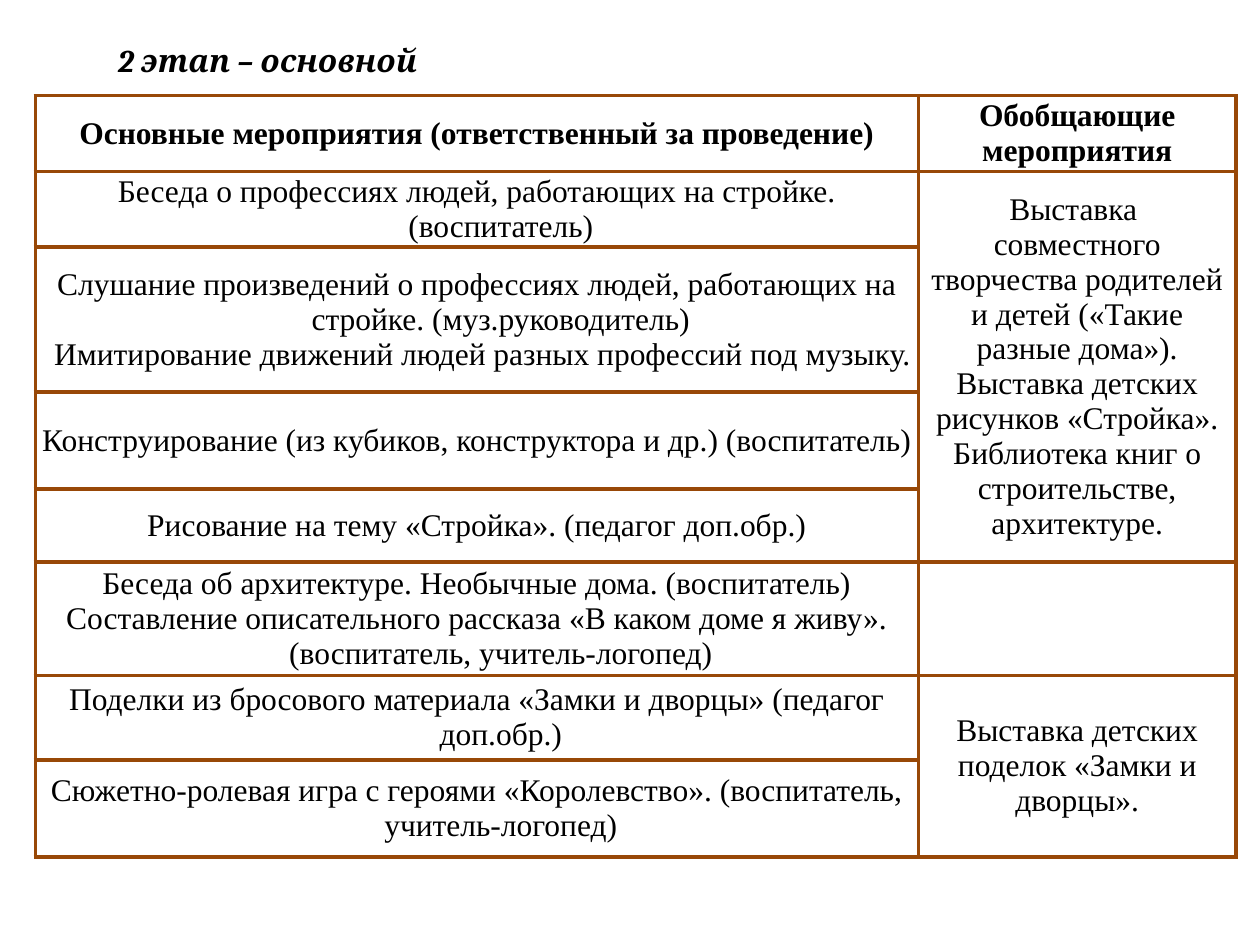
from lxml.etree import SubElement
from pptx import Presentation
from pptx.dml.color import RGBColor
from pptx.enum.text import MSO_ANCHOR, MSO_AUTO_SIZE, PP_ALIGN
from pptx.oxml import parse_xml
from pptx.oxml.ns import nsdecls, qn
from pptx.util import Inches, Pt

BLACK = RGBColor(0x00, 0x00, 0x00)
BROWN = RGBColor(0x98, 0x48, 0x07)
WHITE = RGBColor(0xFF, 0xFF, 0xFF)

COLUMN_WIDTHS = [7.01, 2.52]
ROW_HEIGHTS = [0.6, 0.6, 1.15, 0.77, 0.58, 0.9, 0.67, 0.77]
HANGING = (0.38, -0.38)
MUSIC_INDENT = (0.1, -0.01)

# One entry per row; each holds the paragraphs of its cell
ACTIVITIES = [
    ["Основные мероприятия (ответственный за проведение)"],
    ["Беседа о профессиях людей, работающих на стройке. (воспитатель)"],
    ["Слушание произведений о профессиях людей, работающих на стройке. (муз.руководитель)",
     "Имитирование движений людей разных профессий под музыку."],
    ["Конструирование (из кубиков, конструктора и др.) (воспитатель)"],
    ["Рисование на тему «Стройка». (педагог доп.обр.)"],
    ["Беседа об архитектуре. Необычные дома. (воспитатель)",
     "Составление описательного рассказа «В каком доме я живу». (воспитатель, учитель-логопед)"],
    ["Поделки из бросового материала «Замки и дворцы» (педагог доп.обр.)"],
    ["Сюжетно-ролевая игра с героями «Королевство». (воспитатель, учитель-логопед)"],
]

# First row, last row, paragraphs
RESULTS = [
    (0, 0, ["Обобщающие мероприятия"]),
    (1, 4, ["Выставка  совместного творчества родителей и детей («Такие разные дома»).",
            "Выставка детских рисунков «Стройка».",
            "Библиотека книг о строительстве, архитектуре."]),
    (6, 7, ["Выставка детских поделок «Замки и дворцы»."]),
]


def set_indent(paragraph, left, first):
    properties = paragraph._p.get_or_add_pPr()
    properties.set("marL", str(Inches(left)))
    properties.set("indent", str(Inches(first)))


def style_font(font, name, bold, italic=False):
    font.name = name
    font.size = Pt(18)
    font.bold = bold
    font.italic = italic
    font.color.rgb = BLACK


def add_title(slide, left, top, width, height):
    box = slide.shapes.add_textbox(Inches(left), Inches(top), Inches(width), Inches(height))
    frame = box.text_frame
    frame.word_wrap = True
    frame.auto_size = MSO_AUTO_SIZE.SHAPE_TO_FIT_TEXT
    frame.text = "2 этап – основной"
    paragraph = frame.paragraphs[0]
    paragraph.alignment = PP_ALIGN.JUSTIFY
    paragraph.line_spacing = 1.5
    set_indent(paragraph, 0, 0.49)
    style_font(paragraph.runs[0].font, "Cambria", True, True)


def format_cell(cell):
    cell.margin_left = cell.margin_right = Inches(0.03)
    cell.margin_top = cell.margin_bottom = 0
    cell.vertical_anchor = MSO_ANCHOR.MIDDLE
    cell.fill.background()
    properties = cell._tc.get_or_add_tcPr()
    for position, side in enumerate(("lnL", "lnR", "lnT", "lnB")):
        line = parse_xml(f'<a:{side} {nsdecls("a")} w="{Pt(2.25)}"/>')
        color = SubElement(SubElement(line, qn("a:solidFill")), qn("a:srgbClr"))
        color.set("val", str(BROWN))
        properties.insert(position, line)


def fill_cell(cell, texts, bold, indents=()):
    cell.text_frame.text = "\n".join(texts)
    for paragraph in cell.text_frame.paragraphs:
        paragraph.alignment = PP_ALIGN.CENTER
        style_font(paragraph.runs[0].font, "Times New Roman", bold)
    for paragraph, indent in zip(cell.text_frame.paragraphs, indents):
        set_indent(paragraph, *indent)


def add_plan_table(slide, left, top):
    frame = slide.shapes.add_table(
        len(ROW_HEIGHTS), len(COLUMN_WIDTHS), Inches(left), Inches(top),
        Inches(sum(COLUMN_WIDTHS)), Inches(sum(ROW_HEIGHTS)))
    table = frame.table
    table.first_row = table.horz_banding = False
    for column, width in zip(table.columns, COLUMN_WIDTHS):
        column.width = Inches(width)
    for row, height in zip(table.rows, ROW_HEIGHTS):
        row.height = Inches(height)
    for cell in table.iter_cells():
        format_cell(cell)

    # Left column: activities
    for row, texts in enumerate(ACTIVITIES):
        second = MUSIC_INDENT if row == 2 else HANGING
        fill_cell(table.cell(row, 0), texts, row == 0, (HANGING, second))

    # Right column: results, merged over the activities they sum up
    for first, last, texts in RESULTS:
        cell = table.cell(first, 1)
        if last > first:
            cell.merge(table.cell(last, 1))
        fill_cell(cell, texts, first == 0)


def main():
    presentation = Presentation()
    presentation.slide_width = Inches(10)
    presentation.slide_height = Inches(7.5)
    slide = presentation.slides.add_slide(presentation.slide_layouts[6])
    slide.background.fill.solid()
    slide.background.fill.fore_color.rgb = WHITE
    add_title(slide, 0.35, 0.13, 9.13, 0.56)
    add_plan_table(slide, 0.28, 0.76)
    presentation.save("out.pptx")


if __name__ == "__main__":
    main()
